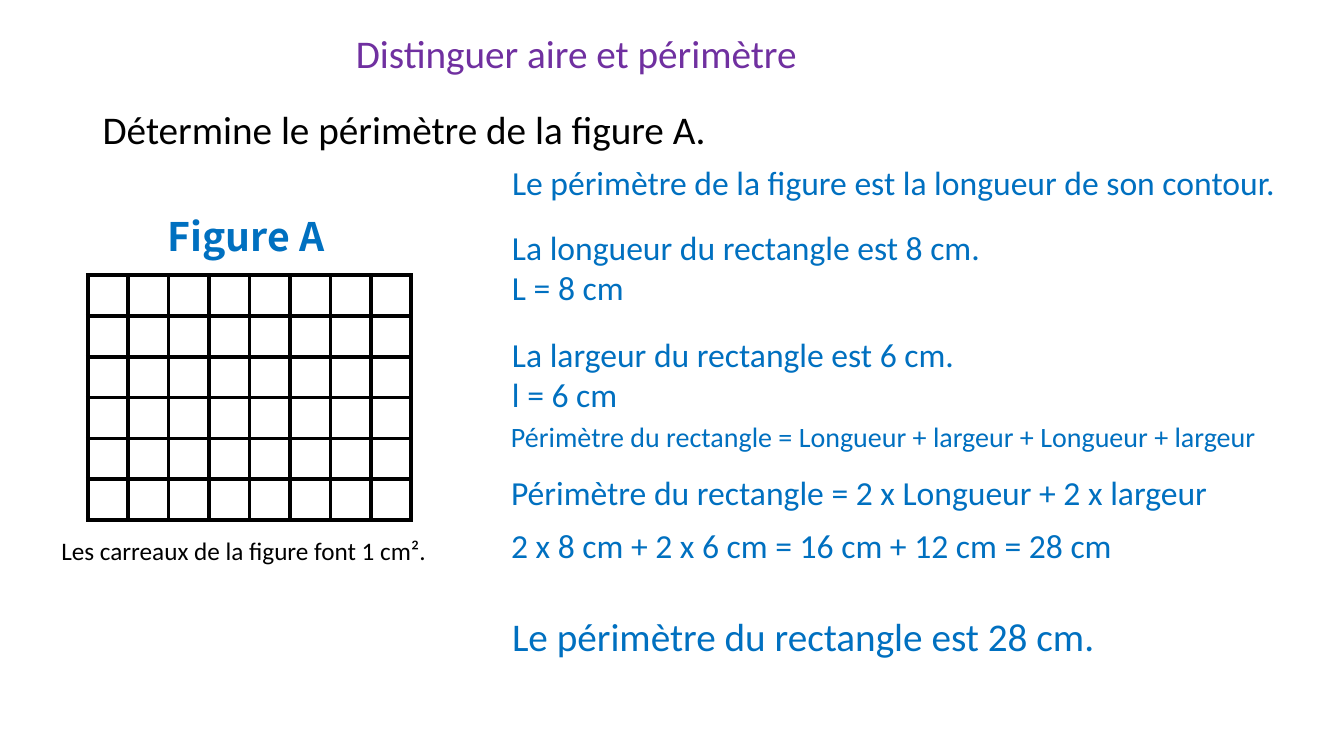
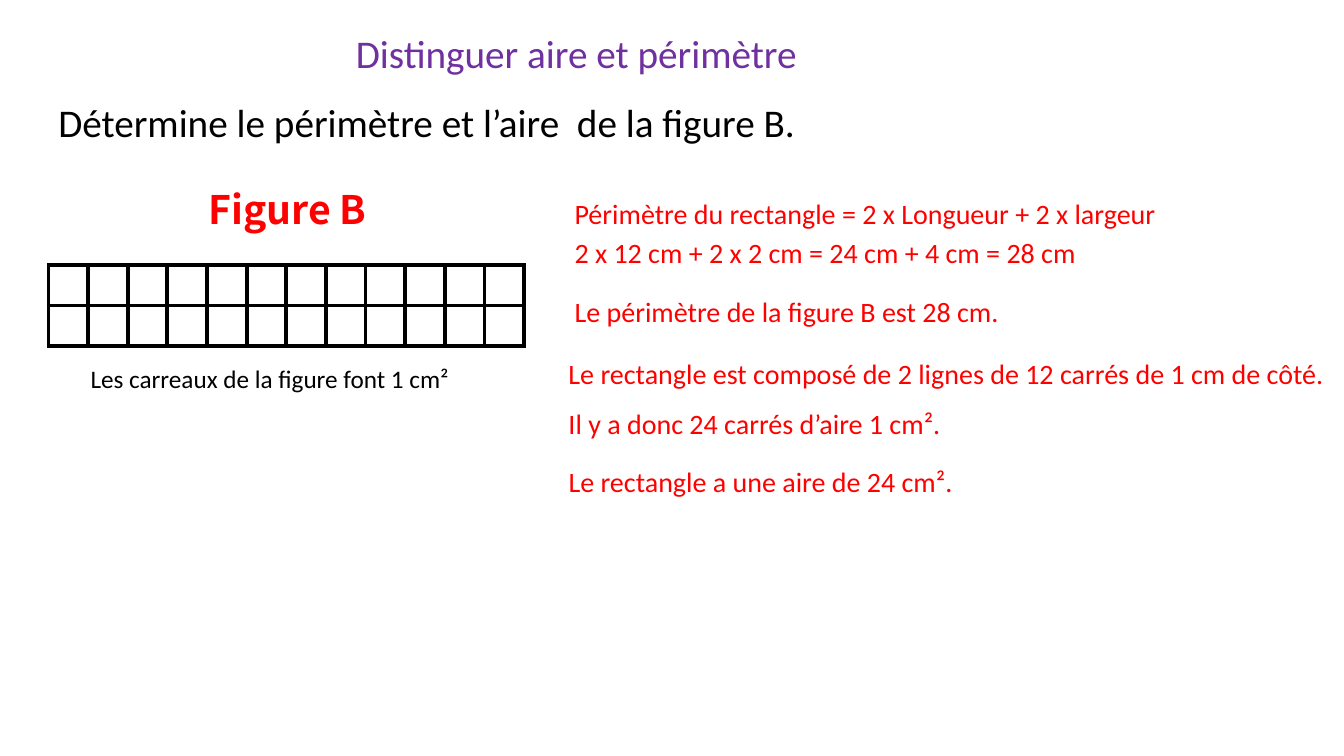
from dataclasses import dataclass

import pptx
import pptx.dml.color
import pptx.enum.text
import pptx.oxml
import pptx.oxml.ns
import pptx.util

Inches = pptx.util.Inches
Color = pptx.dml.color.RGBColor
Align = pptx.enum.text.PP_ALIGN
Anchor = pptx.enum.text.MSO_ANCHOR
Fit = pptx.enum.text.MSO_AUTO_SIZE


@dataclass(frozen=True)
class Theme:
    body: str = "Calibri"
    label: str = "Noto Sans CJK JP"
    black: Color = Color(0, 0, 0)
    purple: Color = Color(0x70, 0x30, 0xA0)
    blue: Color = Color(0x00, 0x70, 0xC0)
    red: Color = Color(0xFF, 0, 0)
    large: int = 28
    medium: int = 24
    small: int = 20
    note: int = 18
    rule: int = 3


THEME = Theme()


@dataclass(frozen=True)
class Text:
    left: float
    top: float
    width: float
    words: str
    size: int


@dataclass(frozen=True)
class Grid:
    left: float
    top: float
    width: float
    height: float
    cols: int
    rows: int


@dataclass(frozen=True)
class Lesson:
    prompt: Text
    name: Text
    grid: Grid
    note: Text
    steps: tuple[Text, ...]
    color: Color


LESSONS = (
    Lesson(
        prompt=Text(0.92, 1, 6.25, "Détermine le périmètre de la figure A.", THEME.large),
        name=Text(1.26, 2.06, 2.36, "Figure A", THEME.large),
        grid=Grid(0.87, 2.73, 3.21, 2.43, 8, 6),
        note=Text(0.51, 5.26, 3.87, "Les carreaux de la figure font 1 cm².", THEME.note),
        steps=(
            Text(4.98, 1.56, 8.12,
                 "Le périmètre de la figure est la longueur de son contour.", THEME.medium),
            Text(4.98, 2.2, 6, "La longueur du rectangle est 8 cm.\nL = 8 cm", THEME.medium),
            Text(4.98, 3.26, 6, "La largeur du rectangle est 6 cm.\nl = 6 cm", THEME.medium),
            Text(4.97, 4.11, 8.3,
                 "Périmètre du rectangle = Longueur + largeur + Longueur + largeur", THEME.small),
            Text(4.97, 4.63, 7.62,
                 "Périmètre du rectangle = 2 x Longueur + 2 x largeur", THEME.medium),
            Text(4.97, 5.16, 6.25,
                 "2 x 8 cm + 2 x 6 cm = 16 cm + 12 cm = 28 cm", THEME.medium),
            Text(4.98, 6.03, 6.91, "Le périmètre du rectangle est 28 cm.", THEME.large),
        ),
        color=THEME.blue,
    ),
    Lesson(
        prompt=Text(0.48, 0.93, 7.62,
                    "Détermine le périmètre et l’aire  de la figure B.", THEME.large),
        name=Text(1.67, 1.79, 2.36, "Figure B", THEME.large),
        grid=Grid(0.48, 2.63, 4.72, 0.8, 12, 2),
        note=Text(0.8, 3.55, 3.8, "Les carreaux de la figure font 1 cm²", THEME.note),
        steps=(
            Text(5.6, 1.9, 7.01,
                 "Périmètre du rectangle = 2 x Longueur + 2 x largeur", THEME.small),
            Text(5.6, 2.29, 6.25,
                 "2 x 12 cm + 2 x 2 cm = 24 cm + 4 cm = 28 cm", THEME.small),
            Text(5.6, 2.87, 5.59, "Le périmètre de la figure B est 28 cm.", THEME.small),
            Text(5.54, 3.49, 7.8,
                 "Le rectangle est composé de 2 lignes de 12 carrés de 1 cm de côté.",
                 THEME.small),
            Text(5.54, 3.98, 6, "Il y a donc 24 carrés d’aire 1 cm².", THEME.small),
            Text(5.54, 4.56, 5.59, "Le rectangle a une aire de 24 cm².", THEME.small),
        ),
        color=THEME.red,
    ),
)


def style(frame, size: int, color: Color, face: str = THEME.body,
          bold: bool = False, align=Align.LEFT) -> None:
    for para in frame.paragraphs:
        para.alignment = align
        para.font.name = face
        para.font.size = pptx.util.Pt(size)
        para.font.bold = bold
        para.font.color.rgb = color


def add_title(slide) -> None:
    title = slide.shapes.title
    title.left, title.top = Inches(3.43), Inches(0.1)
    title.width, title.height = Inches(7.24), Inches(0.82)
    frame = title.text_frame
    frame.text = "Distinguer aire et périmètre"
    frame.auto_size = Fit.NONE
    frame.vertical_anchor = Anchor.TOP
    frame.paragraphs[0].line_spacing = 1.3
    style(frame, THEME.large, THEME.purple)


def add_text(slide, text: Text, color: Color, **look) -> None:
    lines = text.words.count("\n") + 1
    high = 0.1 + lines * text.size * 1.22 / 72
    box = slide.shapes.add_textbox(Inches(text.left), Inches(text.top),
                                   Inches(text.width), Inches(high))
    frame = box.text_frame
    frame.word_wrap = True
    frame.auto_size = Fit.SHAPE_TO_FIT_TEXT
    frame.text = text.words
    style(frame, text.size, color, **look)


def add_rules(cell) -> None:
    """Draw the four borders of a cell, ahead of its fill as the schema asks."""
    props = cell._tc.get_or_add_tcPr()
    for spot, side in enumerate(("lnL", "lnR", "lnT", "lnB")):
        props.insert(spot, pptx.oxml.parse_xml(
            f'<a:{side} {pptx.oxml.ns.nsdecls("a")} w="{pptx.util.Pt(THEME.rule)}">'
            f'<a:solidFill><a:srgbClr val="{THEME.black}"/></a:solidFill></a:{side}>'))


def add_grid(slide, grid: Grid) -> None:
    table = slide.shapes.add_table(
        grid.rows, grid.cols, Inches(grid.left), Inches(grid.top),
        Inches(grid.width), Inches(grid.height)).table
    table.first_row = table.horz_banding = False
    for col in table.columns:
        col.width = Inches(grid.width / grid.cols)
    for row in table.rows:
        row.height = Inches(grid.height / grid.rows)
    for cell in table.iter_cells():
        cell.margin_top = cell.margin_bottom = 0
        cell.fill.background()
        add_rules(cell)


def add_lesson(deck, lesson: Lesson) -> None:
    slide = deck.slides.add_slide(deck.slide_layouts.get_by_name("Title Only"))
    add_title(slide)
    add_text(slide, lesson.prompt, THEME.black)
    add_text(slide, lesson.name, lesson.color, face=THEME.label, bold=True,
             align=Align.CENTER)
    add_grid(slide, lesson.grid)
    add_text(slide, lesson.note, THEME.black)
    for step in lesson.steps:
        add_text(slide, step, lesson.color)


def main() -> None:
    deck = pptx.Presentation()
    deck.slide_width, deck.slide_height = Inches(13.33), Inches(7.5)
    for lesson in LESSONS:
        add_lesson(deck, lesson)
    deck.save("out.pptx")


if __name__ == "__main__":
    main()
